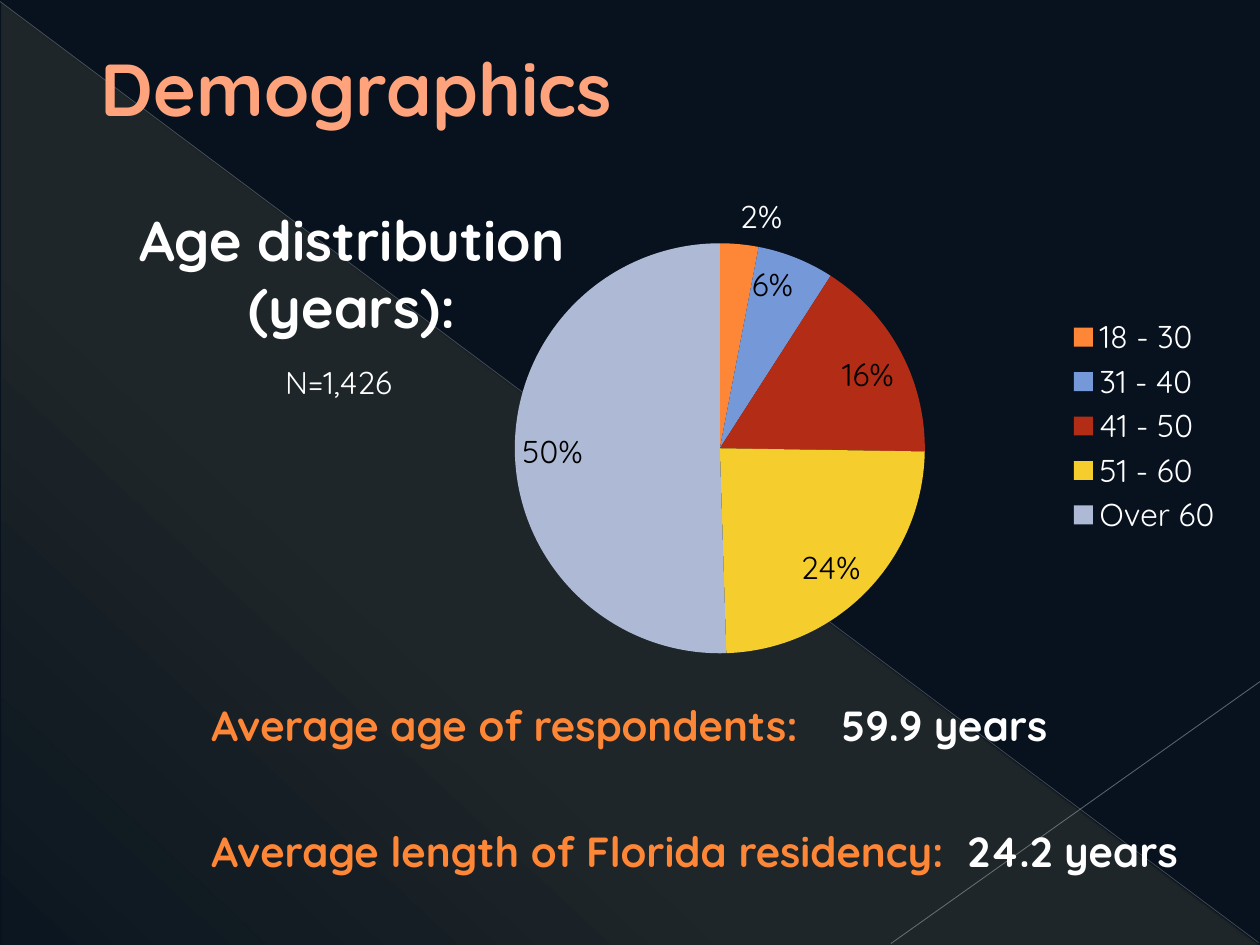
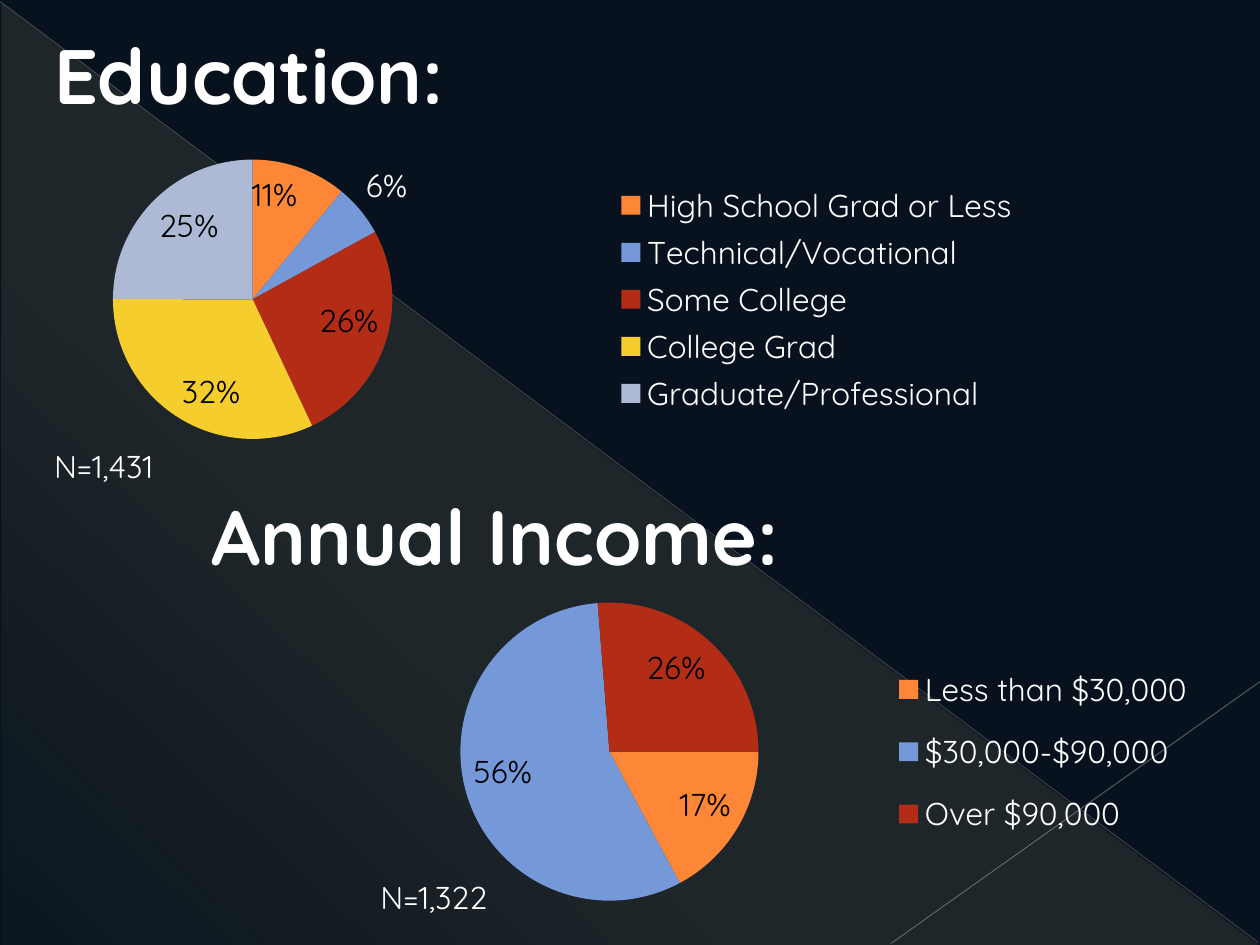
import pptx
import pptx.chart.data
import pptx.dml.color
import pptx.enum.chart
import pptx.enum.shapes
import pptx.enum.text
import pptx.oxml
import pptx.oxml.ns
import pptx.util
from lxml import etree

Cm = pptx.util.Cm
Pt = pptx.util.Pt
RGBColor = pptx.dml.color.RGBColor
LabelPosition = pptx.enum.chart.XL_LABEL_POSITION
qn = pptx.oxml.ns.qn
DRAWING_NS = pptx.oxml.ns.nsdecls("a")

FONT = "Quicksand"
NAVY = RGBColor(0x08, 0x12, 0x1E)
PALE_YELLOW = RGBColor(0xFF, 0xF3, 0x9D)
UPPER_RULE = RGBColor(0xBA, 0xBD, 0xC4)
LOWER_RULE = RGBColor(0xC1, 0xC4, 0xCA)
PEACH = RGBColor(0xFF, 0xA3, 0x7C)
BROWN = RGBColor(0xB0, 0x5D, 0x26)
WHITE = RGBColor(0xFF, 0xFF, 0xFF)
BLACK = RGBColor(0x00, 0x00, 0x00)
ORANGE = RGBColor(0xFE, 0x86, 0x37)
SLICES = [ORANGE, RGBColor(0x75, 0x98, 0xD9), RGBColor(0xB3, 0x2C, 0x16),
          RGBColor(0xF5, 0xCD, 0x2D), RGBColor(0xAE, 0xBA, 0xD5)]


def cm_box(box):
    return [Cm(length) for length in box]


def add_backdrop(slide):
    slide.background.fill.solid()
    slide.background.fill.fore_color.rgb = NAVY

    wedge = slide.shapes.add_shape(pptx.enum.shapes.MSO_SHAPE.RIGHT_TRIANGLE,
                                   *cm_box((0.03, 0.05, 25.35, 19)))
    wedge.shadow.inherit = False
    wedge.line.fill.background()
    wedge.fill.background()
    stops = "".join(
        f'<a:gs pos="{pos * 1000}"><a:srgbClr val="{PALE_YELLOW}">'
        f'<a:alpha val="{alpha * 1000}"/></a:srgbClr></a:gs>'
        for pos, alpha in ((0, 10), (70, 8), (100, 1)))
    gradient = pptx.oxml.parse_xml(
        f'<a:gradFill {DRAWING_NS} rotWithShape="1"><a:gsLst>{stops}</a:gsLst>'
        f'<a:lin ang="{133 * 60000}" scaled="0"/></a:gradFill>')
    properties = wedge._element.spPr
    properties.replace(properties.find(qn("a:noFill")), gradient)

    add_rule(slide, (0, 0.03, 25.37, 19), UPPER_RULE, 0.39, 35)
    add_rule(slide, (25.4, 13.74, 17.96, 19.02), LOWER_RULE, 0.47, 45)


def add_rule(slide, ends, color, width, opacity):
    rule = slide.shapes.add_connector(
        pptx.enum.shapes.MSO_CONNECTOR.STRAIGHT, *cm_box(ends))
    rule.line.color.rgb = color
    rule.line.width = Pt(width)
    properties = rule._element.spPr
    tint = properties.find(".//" + qn("a:srgbClr"))
    etree.SubElement(tint, qn("a:alpha"), val=str(opacity * 1000))
    etree.SubElement(properties, qn("a:effectLst"))


def style_run(run, text, size, color, bold):
    run.text = text
    run.font.name = FONT
    run.font.size = Pt(size)
    run.font.bold = bold
    run.font.color.rgb = color


def add_text(slide, box, lines, size, bold=False, align=None):
    """Add lines of text, each a list of (text, colour) runs."""
    frame = slide.shapes.add_textbox(*cm_box(box)).text_frame
    frame.word_wrap = True
    for number, line in enumerate(lines):
        paragraph = frame.add_paragraph() if number else frame.paragraphs[0]
        paragraph.alignment = align
        for text, color in line:
            style_run(paragraph.add_run(), text, size, color, bold)
    return frame


def add_title(slide, box, text):
    frame = add_text(slide, box, [[(text, PEACH)]], 42, bold=True)
    frame.vertical_anchor = pptx.enum.text.MSO_ANCHOR.MIDDLE
    frame.margin_left = Cm(1.6)
    outline = pptx.oxml.parse_xml(
        f'<a:ln {DRAWING_NS} w="{Pt(0.5)}"><a:solidFill>'
        f'<a:srgbClr val="{BROWN}"/></a:solidFill></a:ln>')
    frame.paragraphs[0].runs[0].font._element.insert(0, outline)


def set_layout(part, index, area, inner=False):
    """Pin a chart part to area, given as fractions of the chart."""
    for old in part.findall(qn("c:layout")):
        part.remove(old)
    layout = etree.Element(qn("c:layout"))
    manual = etree.SubElement(layout, qn("c:manualLayout"))
    if inner:
        etree.SubElement(manual, qn("c:layoutTarget"), val="inner")
    for axis in ("xMode", "yMode"):
        etree.SubElement(manual, qn("c:" + axis), val="edge")
    for side, share in zip("xywh", area):
        etree.SubElement(manual, qn("c:" + side), val=str(share))
    part.insert(index, layout)


def add_pie(slide, box, shares, pie_area, legend_area, start=0,
            inside=None, outside=None):
    """Add a pie; inside and outside map slice numbers to fixed label texts."""
    data = pptx.chart.data.CategoryChartData()
    data.categories = list(shares)
    data.add_series("Series 1", list(shares.values()))
    chart = slide.shapes.add_chart(
        pptx.enum.chart.XL_CHART_TYPE.PIE, *cm_box(box), data).chart
    chart.has_title = False
    chart.font.name = FONT
    chart.font.size = Pt(18)
    chart.font.color.rgb = WHITE
    chart.has_legend = True
    chart.legend.position = pptx.enum.chart.XL_LEGEND_POSITION.RIGHT
    chart.legend.include_in_layout = False

    plot = chart.plots[0]
    plot.vary_by_categories = True
    series = plot.series[0]
    for number, color in enumerate(SLICES[:len(shares)]):
        fill = series.points[number].format.fill
        fill.solid()
        fill.fore_color.rgb = color

    labels = series.data_labels
    labels.show_value = False
    labels.show_percentage = True
    labels.position = LabelPosition.INSIDE_END
    labels.font.name = FONT
    labels.font.size = Pt(18)
    labels.font.color.rgb = BLACK
    for fixed, color, position in (
            (inside, BLACK, LabelPosition.INSIDE_END),
            (outside, WHITE, LabelPosition.OUTSIDE_END)):
        for number, text in (fixed or {}).items():
            label = series.points[number].data_label
            run = label.text_frame.paragraphs[0].add_run()
            style_run(run, text, 18, color, False)
            label.position = position

    pie = plot._element
    for old in pie.findall(qn("c:firstSliceAng")):
        pie.remove(old)
    etree.SubElement(pie, qn("c:firstSliceAng"), val=str(start))
    set_layout(pie.getparent(), 0, pie_area, inner=True)
    set_layout(chart.legend._element, 1, legend_area)


def add_average(slide, left, top, label, value):
    add_text(slide, (left, top, 20.32, 1.27),
             [[(label, ORANGE), ("\t" + value, WHITE)]], 24, bold=True)


def add_sample_size(slide, left, top, count):
    add_text(slide, (left, top, 4, 1.07), [[("N=" + count, WHITE)]], 18)


def add_pie_panel(slide, left, top, heading, count, pie_box, count_at, **pie):
    """Heading, pie and sample size, offset from the panel's corner."""
    add_text(slide, (left, top, 13, 2.13), [[(heading, WHITE)]], 44, bold=True)
    right, down, width, height = pie_box
    add_pie(slide, (left + right, top + down, width, height), **pie)
    add_sample_size(slide, left + count_at[0], top + count_at[1], count)


def build_demographics(slide):
    add_title(slide, (0.43, 0.43, 22.86, 2.64), "Demographics")
    add_text(slide, (1.7, 4.01, 10.8, 3),
             [[("Age distribution", WHITE)], [("(years):", WHITE)]],
             32, bold=True, align=pptx.enum.text.PP_ALIGN.CENTER)
    add_pie(slide, (7.82, 3.61, 16.94, 9.96),
            {"18 - 30": 3, "31 - 40": 6, "41 - 50": 16, "51 - 60": 24,
             "Over 60": 50},
            pie_area=(0.15, 0.13, 0.49, 0.83),
            legend_area=(0.8, 0.27, 0.2, 0.46),
            inside={4: "50%"}, outside={0: "2%"})
    add_sample_size(slide, 5.5, 7.19, "1,426")
    add_average(slide, 4.01, 13.97, "Average age of respondents:", "59.9 years")
    add_average(slide, 4.01, 16.51, "Average length of Florida residency:",
                "24.2 years")


def build_education_and_income(slide):
    add_pie_panel(slide, 0.84, 0.43, "Education:", "1,431",
                  pie_box=(0.23, 2.11, 20.12, 6.99), count_at=(0, 8.46),
                  shares={"High School Grad or Less": 11,
                          "Technical/Vocational": 6, "Some College": 26,
                          "College Grad": 32, "Graduate/Professional": 25},
                  pie_area=(0.06, 0.09, 0.28, 0.82),
                  legend_area=(0.55, 0.15, 0.43, 0.7),
                  outside={1: "6%"})
    add_pie_panel(slide, 4.01, 9.73, "Annual Income:", "1,322",
                  pie_box=(2.54, 1.9, 18.21, 7.42), count_at=(3.41, 7.85),
                  shares={"Less than $30,000": 17, "$30,000-$90,000": 56,
                          "Over $90,000": 26},
                  pie_area=(0.15, 0.07, 0.33, 0.81),
                  legend_area=(0.6, 0.19, 0.39, 0.57),
                  start=90, inside={1: "56%"})


def main():
    deck = pptx.Presentation()
    deck.slide_width, deck.slide_height = Cm(25.4), Cm(19.05)
    for build in (build_demographics, build_education_and_income):
        slide = deck.slides.add_slide(deck.slide_layouts[6])
        add_backdrop(slide)
        build(slide)
    deck.save("out.pptx")


if __name__ == "__main__":
    main()
